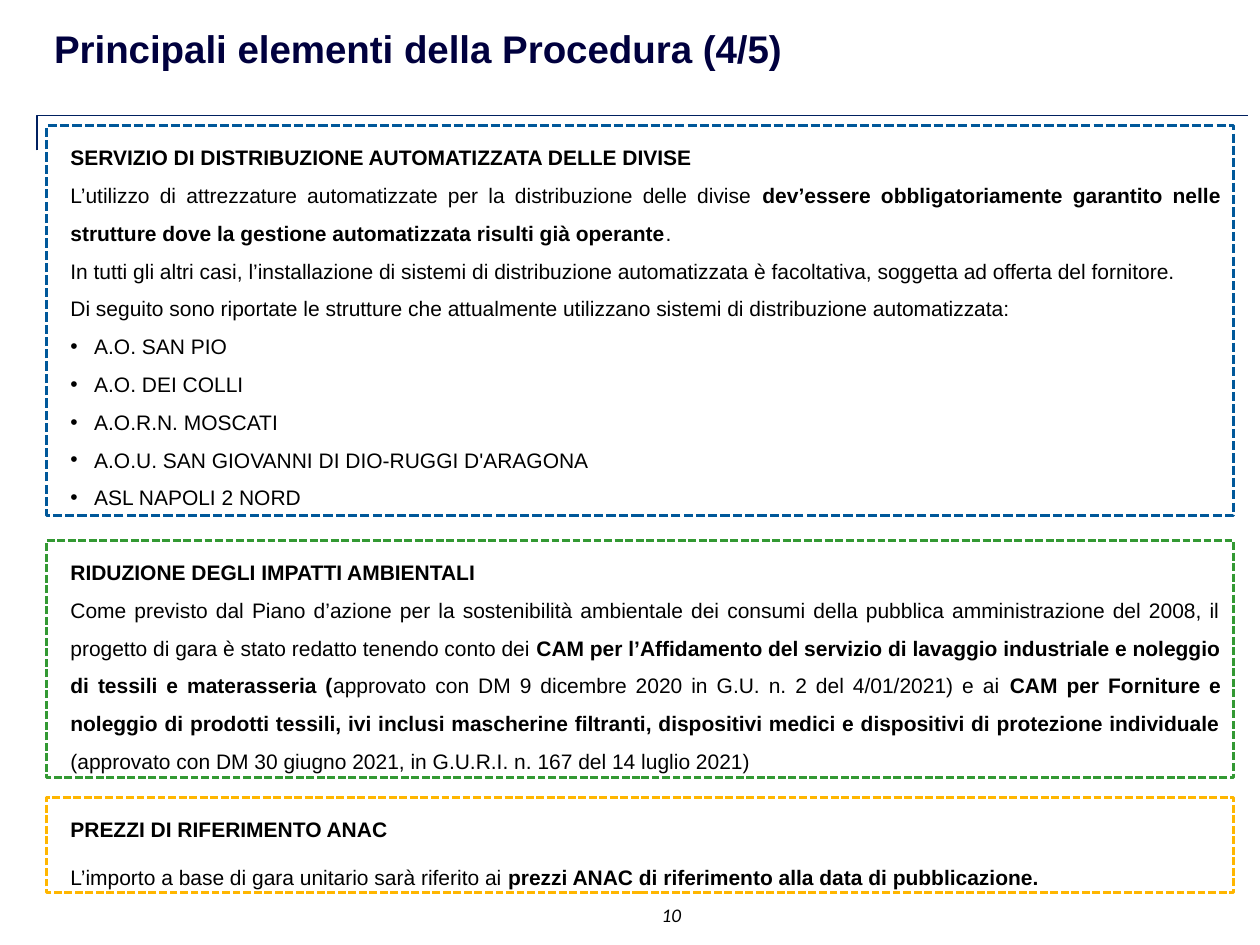
from lxml import etree
from pptx import Presentation
from pptx.dml.color import RGBColor
from pptx.enum.dml import MSO_LINE
from pptx.enum.shapes import MSO_SHAPE
from pptx.enum.text import MSO_ANCHOR, PP_ALIGN
from pptx.oxml.ns import qn
from pptx.util import Cm, Pt

BLACK = RGBColor(0x00, 0x00, 0x00)
NAVY = RGBColor(0x00, 0x00, 0x3E)
RULE_BLUE = RGBColor(0x00, 0x20, 0x60)
BLUE = RGBColor(0x00, 0x58, 0x9A)
GREEN = RGBColor(0x33, 0x99, 0x33)
AMBER = RGBColor(0xFF, 0xB6, 0x00)

DASH = MSO_LINE.SQUARE_DOT
RECTANGLE = MSO_SHAPE.RECTANGLE
TOP = MSO_ANCHOR.TOP
LEFT, CENTER, JUSTIFY = PP_ALIGN.LEFT, PP_ALIGN.CENTER, PP_ALIGN.JUSTIFY

PANEL_LEFT, PANEL_WIDTH = Cm(0.94), Cm(23.93)

STRUCTURES = [
    "A.O. SAN PIO",
    "A.O. DEI COLLI",
    "A.O.R.N. MOSCATI",
    "A.O.U. SAN GIOVANNI DI DIO-RUGGI D'ARAGONA",
    "ASL NAPOLI 2 NORD",
]

DISTRIBUTION = [
    [("L’utilizzo di attrezzature automatizzate per la distribuzione delle divise ", False),
     ("dev’essere obbligatoriamente garantito nelle strutture dove la gestione "
      "automatizzata risulti già operante", True),
     (". ", False)],
    [("In tutti gli altri casi, l’installazione di sistemi di distribuzione automatizzata "
      "è facoltativa, soggetta ad offerta del fornitore. ", False)],
    [("Di seguito sono riportate le strutture che attualmente utilizzano sistemi di "
      "distribuzione automatizzata:", False)],
]

ENVIRONMENT = [
    [("Come previsto dal Piano d’azione per la sostenibilità ambientale dei consumi della "
      "pubblica amministrazione del 2008, il progetto di gara è stato redatto tenendo "
      "conto dei ", False),
     ("CAM per l’Affidamento del servizio di lavaggio industriale e noleggio di tessili "
      "e materasseria (", True),
     ("approvato con DM 9 dicembre 2020 in G.U. n. 2 del 4/01/2021) e ai ", False),
     ("CAM per Forniture e noleggio di prodotti tessili, ivi inclusi mascherine filtranti, "
      "dispositivi medici e dispositivi di protezione individuale ", True),
     ("(approvato con DM 30 giugno 2021, in G.U.R.I. n. 167 del 14 luglio 2021)", False)],
]

PRICES = [
    [("L’importo a base di gara unitario sarà riferito ai ", False),
     ("prezzi ANAC di riferimento alla data di pubblicazione. ", True)],
]


def write(paragraph, runs, size=12, font="Arial", color=BLACK, italic=False,
          align=LEFT, line_spacing=None, space=None, margin=None, bullet=False):
    paragraph.alignment = align
    if line_spacing:
        paragraph.line_spacing = line_spacing
    if space:
        paragraph.space_before = paragraph.space_after = Pt(space)
    properties = paragraph._p.get_or_add_pPr()
    if margin:
        properties.set("marL", str(margin))
    if bullet:
        properties.set("indent", str(Cm(-0.48)))
        etree.SubElement(properties, qn("a:buFont")).set("typeface", "Arial")
        etree.SubElement(properties, qn("a:buChar")).set("char", "•")
    for words, bold in runs:
        run = paragraph.add_run()
        run.text = words
        run.font.size = Pt(size)
        run.font.name = font
        run.font.bold = bold
        run.font.italic = italic
        run.font.color.rgb = color


def add_corner_rule(slide, left, top, width, height):
    builder = slide.shapes.build_freeform(left, top + height)
    builder.add_line_segments([(left, top), (left + width, top)], close=False)
    rule = builder.convert_to_shape()
    rule.shadow.inherit = False
    rule.fill.background()
    rule.line.color.rgb = RULE_BLUE
    rule.line.width = Pt(1)


def add_title(slide, left, top, width, height):
    frame = slide.shapes.add_textbox(left, top, width, height).text_frame
    frame.word_wrap = False
    write(frame.paragraphs[0], [("Principali elementi della Procedura (4/5)", True)],
          size=22, color=NAVY)


def add_page_number(slide, left, top, width, height):
    frame = slide.shapes.add_textbox(left, top, width, height).text_frame
    frame.word_wrap = True
    frame.margin_left = frame.margin_right = frame.margin_top = frame.margin_bottom = 0
    write(frame.paragraphs[0], [("10", False)], size=11, font="Calibri",
          italic=True, align=CENTER)


def add_panel(slide, top, height, color, heading, body, bullets=(), weight=1.5, space=None):
    panel = slide.shapes.add_shape(RECTANGLE, PANEL_LEFT, top, PANEL_WIDTH, height)
    panel.shadow.inherit = False
    panel.fill.background()
    panel.line.color.rgb = color
    panel.line.width = Pt(weight)
    panel.line.dash_style = DASH
    frame = panel.text_frame
    frame.word_wrap = True
    frame.vertical_anchor = TOP
    layout = {"align": JUSTIFY, "line_spacing": 1.5}
    write(frame.paragraphs[0], [(heading, True)], margin=Cm(0.23), **layout)
    for runs in body:
        write(frame.add_paragraph(), runs, margin=Cm(0.23), space=space, **layout)
    for item in bullets:
        write(frame.add_paragraph(), [(item, False)], margin=Cm(0.71), bullet=True, **layout)


def main():
    presentation = Presentation()
    presentation.slide_width = Cm(25.4)
    presentation.slide_height = Cm(19.05)
    slide = presentation.slides.add_slide(presentation.slide_layouts[6])

    add_corner_rule(slide, Cm(0.74), Cm(2.33), Cm(24.41), Cm(0.7))
    add_panel(slide, Cm(2.54), Cm(7.85), BLUE,
              "SERVIZIO DI DISTRIBUZIONE AUTOMATIZZATA DELLE DIVISE",
              DISTRIBUTION, bullets=STRUCTURES, weight=1.75)
    add_title(slide, Cm(0.84), Cm(0.38), Cm(15.4), Cm(1.2))
    add_page_number(slide, Cm(12.8), Cm(18.21), Cm(1.47), Cm(0.48))
    add_panel(slide, Cm(10.9), Cm(4.78), GREEN,
              "RIDUZIONE DEGLI IMPATTI AMBIENTALI", ENVIRONMENT)
    add_panel(slide, Cm(16.08), Cm(1.91), AMBER,
              "PREZZI DI RIFERIMENTO ANAC", PRICES, space=6)

    presentation.save("out.pptx")


if __name__ == "__main__":
    main()
